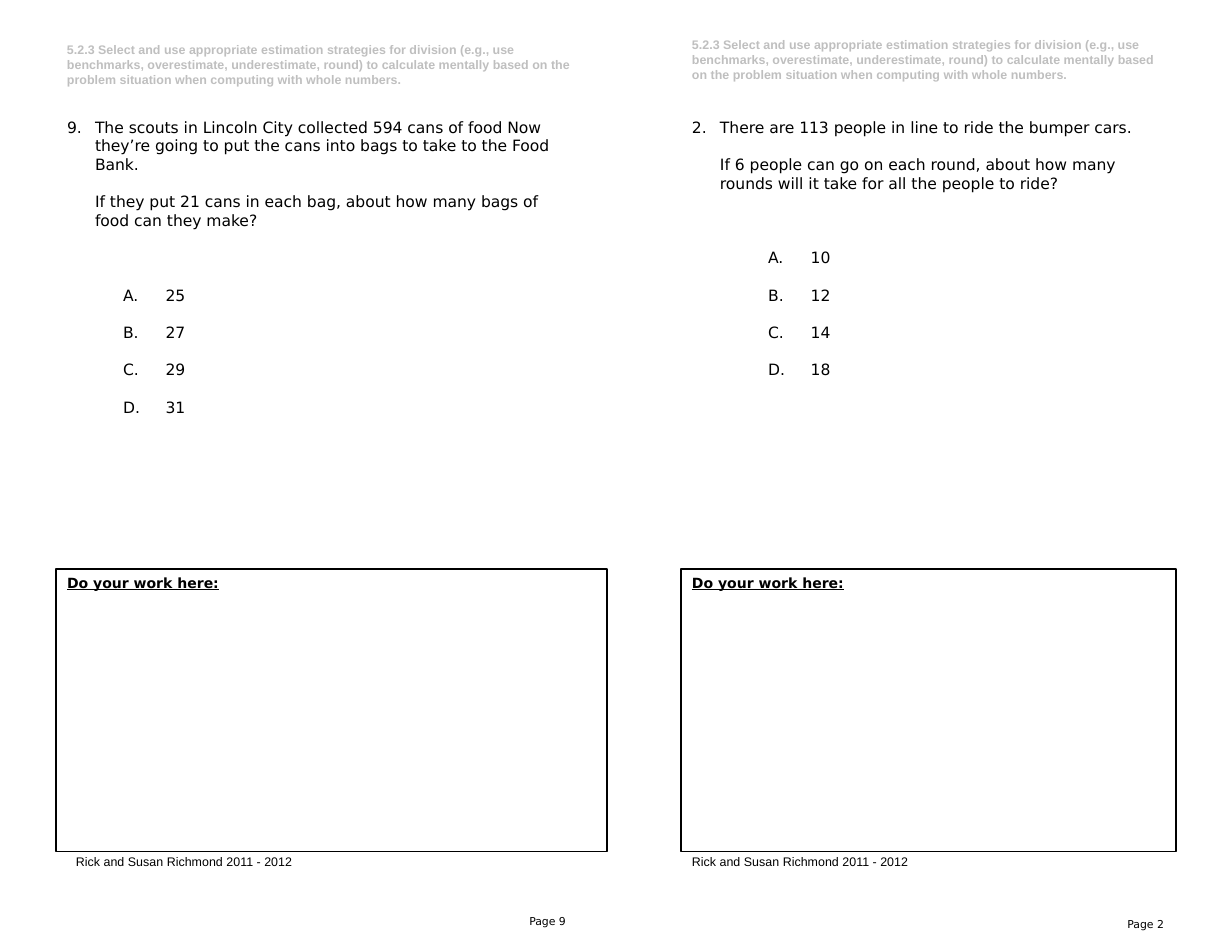
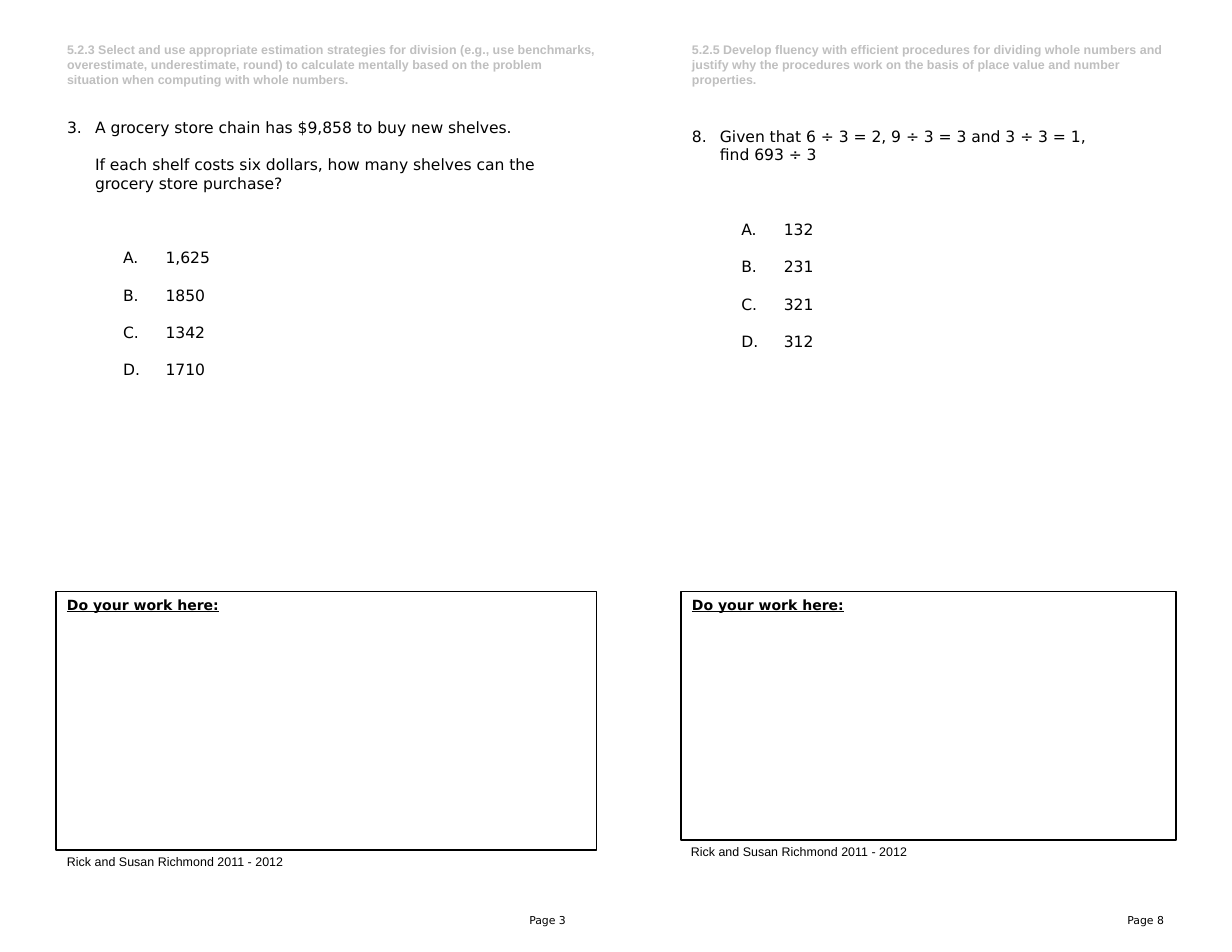
from dataclasses import dataclass

from lxml import etree
from pptx import Presentation
from pptx.dml.color import RGBColor
from pptx.enum import shapes, text
from pptx.oxml.ns import qn
from pptx.util import Inches, Pt


@dataclass(frozen=True)
class Theme:
    ink: str = "000000"
    pale: str = "BFBFBF"
    sans: str = "Arial"
    body: str = "DejaVu Sans"
    small: int = 7
    note: int = 8
    label: int = 9
    main: int = 10
    rule: float = 0.75
    gap: int = 12


@dataclass
class Page:
    """One half of a sheet; each box is left, top, width, height."""
    number: int
    goal: str
    lines: tuple
    choices: tuple
    head: tuple
    ask: tuple
    work: tuple
    foot: tuple
    folio: tuple
    indent: float = 0.88
    gap: int = Theme.gap


THEME = Theme()
CREDIT = "Rick and Susan Richmond 2011 - 2012"
LEFT, RIGHT = 0.5, 6.08
FOLIO_L, FOLIO_R = 4.33, 9.67
ESTIMATE = (
    "5.2.3 Select and use appropriate estimation strategies for division "
    "(e.g., use benchmarks, overestimate, underestimate, round) to calculate "
    "mentally based on the problem situation when computing with whole numbers."
)
FLUENCY = (
    "5.2.5 Develop fluency with efficient procedures for dividing whole "
    "numbers and justify why the procedures work on the basis of place value "
    "and number properties."
)

SHEETS = (
    (
        Page(9, ESTIMATE,
             ("The scouts in Lincoln City collected 594 cans of food Now "
              "they’re going to put the cans into bags to take to the Food Bank.",
              "If they put 21 cans in each bag, about how many bags of food "
              "can they make?"),
             ("25", "27", "29", "31"),
             head=(LEFT, 0.33, 4.83, 0.5), ask=(LEFT, 1, 4.75, 2.79),
             work=(LEFT, 5.08, 4.92, 2.52), foot=(0.58, 7.58, 4.67, 0.24),
             folio=(FOLIO_L, 8.12, 0.82, 0.3)),
        Page(2, ESTIMATE,
             ("There are 113 people in line to ride the bumper cars.",
              "If 6 people can go on each round, about how many rounds will "
              "it take for all the people to ride?"),
             ("10", "12", "14", "18"),
             head=(RIGHT, 0.28, 4.42, 0.64), ask=(RIGHT, 1, 4.42, 2.46),
             work=(RIGHT, 5.08, 4.42, 2.52), foot=(RIGHT, 7.58, 4.33, 0.24),
             folio=(FOLIO_R, 8.14, 0.82, 0.3), indent=1.06),
    ),
    (
        Page(3, ESTIMATE,
             ("A grocery store chain has $9,858 to buy new shelves.",
              "If each shelf costs six dollars, how many shelves can the "
              "grocery store purchase?"),
             ("1,625", "1850", "1342", "1710"),
             head=(LEFT, 0.33, 4.92, 0.5), ask=(LEFT, 1, 4.75, 2.46),
             work=(LEFT, 5.28, 4.83, 2.31), foot=(LEFT, 7.58, 4.33, 0.24),
             folio=(FOLIO_L, 8.11, 0.82, 0.3)),
        Page(8, FLUENCY,
             ("Given that 6 ÷ 3 = 2, 9 ÷ 3 = 3 and 3 ÷ 3 = 1,",
              "find 693 ÷ 3"),
             ("132", "231", "321", "312"),
             head=(RIGHT, 0.33, 4.42, 0.5), ask=(RIGHT, 1.08, 4.08, 2.12),
             work=(RIGHT, 5.28, 4.42, 2.22), foot=(6.07, 7.49, 4.33, 0.24),
             folio=(FOLIO_R, 8.11, 0.82, 0.32), indent=0.82, gap=0),
    ),
)


def write(para, words, size=THEME.main, font=THEME.body, color=THEME.ink,
          bold=False, under=False, align=text.PP_ALIGN.LEFT, before=0):
    run = para.add_run()
    run.text = words
    face = run.font
    face.name, face.size = font, Pt(size)
    face.bold, face.underline = bold, under
    face.color.rgb = RGBColor.from_string(color)
    para.alignment = align
    para.space_before = Pt(before)


def add_text(slide, box, words="", **style):
    frame = slide.shapes.add_textbox(*map(Inches, box)).text_frame
    frame.word_wrap = True
    if words:
        write(frame.paragraphs[0], words, **style)
    return frame


def add_work(slide, box):
    area = slide.shapes.add_shape(shapes.MSO_SHAPE.RECTANGLE, *map(Inches, box))
    area.shadow.inherit = False
    area.fill.background()
    area.line.color.rgb = RGBColor.from_string(THEME.ink)
    area.line.width = Pt(THEME.rule)
    frame = area.text_frame
    frame.word_wrap = True
    frame.vertical_anchor = text.MSO_ANCHOR.TOP
    write(frame.paragraphs[0], "Do your work here:", size=THEME.label,
          bold=True, under=True)


def indent(para, margin, hang=0, kind=None, start=1):
    """Set a hanging indent and, if kind is given, automatic numbering."""
    props = para._p.get_or_add_pPr()
    props.set("marL", str(Inches(margin)))
    props.set("indent", str(Inches(-hang)))
    if kind:
        font = etree.SubElement(props, qn("a:buFont"))
        font.set("typeface", THEME.body)
        mark = etree.SubElement(props, qn("a:buAutoNum"))
        mark.set("type", kind)
        if start > 1:
            mark.set("startAt", str(start))


def add_ask(slide, page):
    frame = add_text(slide, page.ask)
    first, more = page.lines
    para = frame.paragraphs[0]
    write(para, first)
    indent(para, 0.25, 0.25, "arabicPeriod", page.number)
    para = frame.add_paragraph()
    write(para, more, before=page.gap)
    indent(para, 0.25)
    for i, choice in enumerate(page.choices):
        para = frame.add_paragraph()
        write(para, choice, before=THEME.gap if i else 3 * THEME.gap)
        indent(para, page.indent, 0.38, "alphaUcPeriod")


def add_page(slide, page):
    add_text(slide, page.folio, f"Page {page.number}", size=THEME.small,
             align=text.PP_ALIGN.RIGHT)
    add_work(slide, page.work)
    add_text(slide, page.head, page.goal, size=THEME.note, font=THEME.sans,
             color=THEME.pale, bold=True)
    add_ask(slide, page)
    add_text(slide, page.foot, CREDIT, size=THEME.note, font=THEME.sans)


def main():
    deck = Presentation()
    deck.slide_width, deck.slide_height = Inches(11), Inches(8.5)
    blank = deck.slide_layouts[6]
    for sheet in SHEETS:
        slide = deck.slides.add_slide(blank)
        for page in sheet:
            add_page(slide, page)
    deck.save("out.pptx")


if __name__ == "__main__":
    main()
